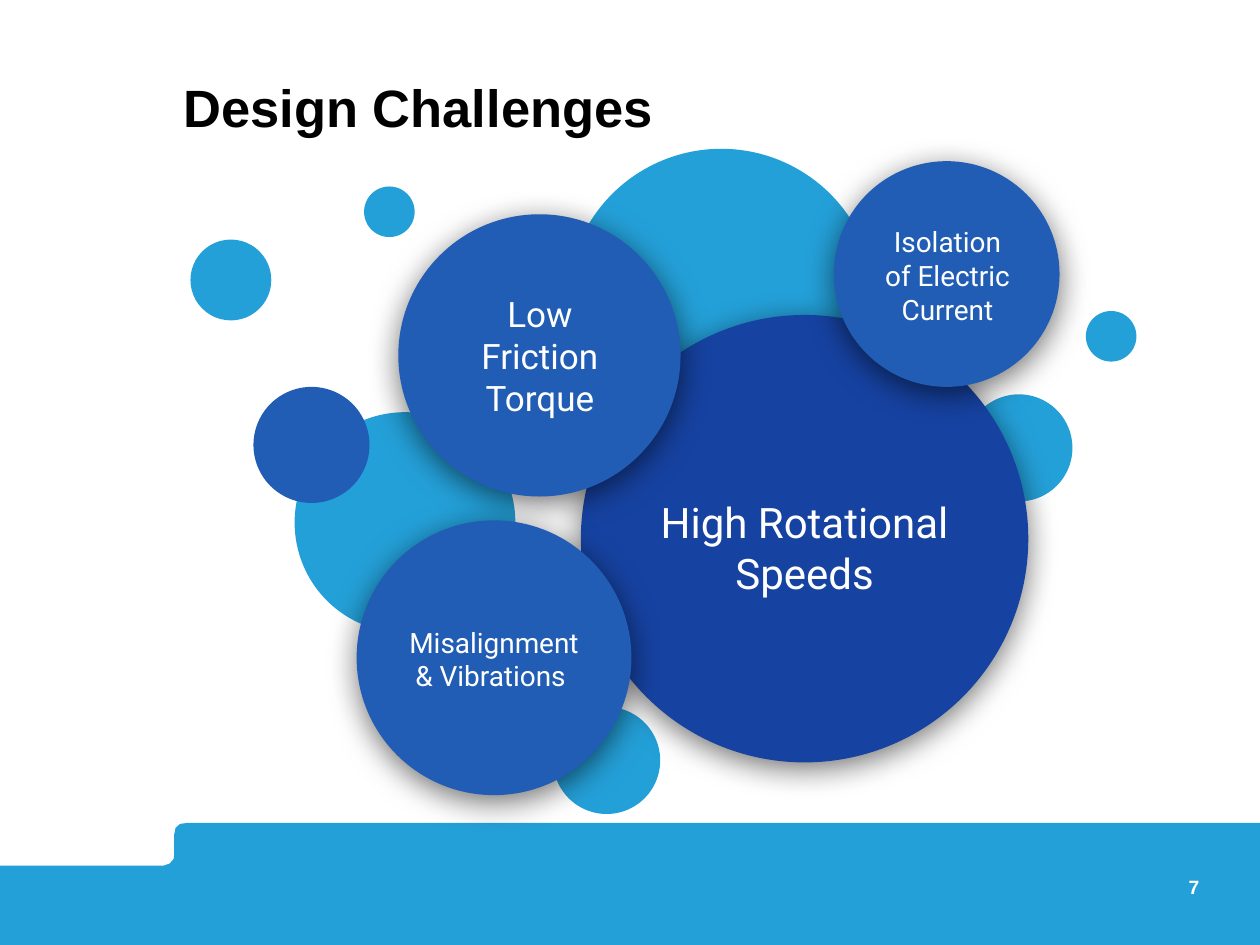
from lxml import etree
from pptx import Presentation
from pptx.dml.color import RGBColor
from pptx.enum.shapes import MSO_SHAPE
from pptx.enum.text import MSO_ANCHOR, PP_ALIGN
from pptx.oxml import parse_xml
from pptx.oxml.ns import nsdecls, qn
from pptx.util import Cm, Pt

SKY, BLUE, NAVY = "24A0D8", "215DB4", "1642A1"
BLACK, WHITE = "000000", "FFFFFF"


def colour(hex_code):
    return RGBColor.from_string(hex_code)


class SlideBuilder:
    """Holds the shared style and the slide being built."""

    heading_font = "Arial"
    label_font = "Roboto"
    padding = Cm(0.25)

    def __init__(self, page):
        self.page = page

    def paint(self, shape, fill):
        shape.shadow.inherit = False
        shape.fill.solid()
        shape.fill.fore_color.rgb = colour(fill)
        shape.line.fill.background()

    def band(self, points, fill):
        corners = [(Cm(x), Cm(y)) for x, y in points]
        builder = self.page.shapes.build_freeform(*corners[0])
        builder.add_line_segments(corners[1:], close=True)
        self.paint(builder.convert_to_shape(), fill)

    def circle(self, left, top, size, fill, parent=None):
        shapes = (parent or self.page).shapes
        disc = shapes.add_shape(MSO_SHAPE.OVAL, Cm(left), Cm(top), Cm(size), Cm(size))
        self.paint(disc, fill)
        return disc

    def soft_shadow(self, shape):
        effects = shape._element.spPr.find(qn("a:effectLst"))
        shadow = parse_xml(
            f'<a:outerShdw {nsdecls("a")} blurRad="{Pt(18)}" dist="{Pt(4)}" '
            f'dir="5400000" algn="t" rotWithShape="0"><a:srgbClr val="{BLACK}"/></a:outerShdw>')
        etree.SubElement(shadow[0], qn("a:alpha")).set("val", "55000")
        effects.append(shadow)

    def set_text(self, box, words, size, ink, font, align, bold=False, spacing=1.0,
                 padding=padding, anchor=MSO_ANCHOR.MIDDLE):
        frame = box.text_frame
        frame.word_wrap = True
        frame.vertical_anchor = anchor
        frame.margin_left = frame.margin_right = padding
        frame.margin_top = frame.margin_bottom = padding
        para = frame.paragraphs[0]
        para.text = words
        para.alignment = align
        para.line_spacing = spacing
        para.font.name = font
        para.font.size = Pt(size)
        para.font.bold = bold
        para.font.color.rgb = colour(ink)

    def text(self, left, top, width, height, words, size, ink, align, **style):
        box = self.page.shapes.add_textbox(Cm(left), Cm(top), Cm(width), Cm(height))
        self.set_text(box, words, size, ink, self.heading_font, align, bold=True, **style)

    def bubble(self, disc, label, fill, words, size):
        group = self.page.shapes.add_group_shape()
        self.soft_shadow(self.circle(*disc, fill, parent=group))
        box = group.shapes.add_shape(MSO_SHAPE.RECTANGLE, *[Cm(length) for length in label])
        self.paint(box, fill)
        self.set_text(box, words, size, WHITE, self.label_font, PP_ALIGN.CENTER)


def main():
    deck = Presentation()
    deck.slide_width, deck.slide_height = Cm(25.4), Cm(19.05)
    slide = SlideBuilder(deck.slides.add_slide(deck.slide_layouts[6]))

    # Footer band with a rounded step
    slide.band([(3.78, 16.59), (25.4, 16.59), (25.4, 19.05), (0, 19.05), (0, 17.45),
                (3.3, 17.45), (3.42, 17.41), (3.5, 17.32), (3.51, 17.25), (3.51, 16.84),
                (3.54, 16.69), (3.63, 16.61)], SKY)

    # Decorative circles: left, top, diameter, fill
    for left, top, size, fill in [
        (11.15, 14.25, 2.16, SKY),
        (3.84, 4.83, 1.63, SKY),
        (5.94, 8.31, 4.45, SKY),
        (11.43, 3, 6.22, SKY),
        (5.11, 7.8, 2.34, BLUE),
        (7.34, 3.76, 1.02, SKY),
        (19.46, 7.95, 2.16, SKY),
        (21.89, 6.27, 1.02, SKY),
    ]:
        slide.circle(left, top, size, fill)

    # Title
    slide.text(3.45, 1.12, 20.29, 1.85, "Design Challenges", 30, BLACK,
               PP_ALIGN.LEFT, spacing=1.15)

    # Challenges: disc, label box, fill, wording, text size
    for challenge in [
        ((11.71, 6.35, 9.02), (12.78, 8.89, 6.88, 4.29), NAVY, "High Rotational Speeds", 24),
        ((8.03, 4.32, 5.69), (8.94, 5.28, 3.89, 3.78), BLUE, "Low Friction Torque", 20),
        ((7.19, 10.49, 5.54), (7.98, 11.53, 3.96, 3.51), BLUE, "Misalignment & Vibrations ", 16),
        ((16.81, 3.25, 4.55), (17.55, 4.04, 3.1, 3.02), BLUE, "Isolation of Electric Current", 16),
    ]:
        slide.bubble(*challenge)

    # Page number
    slide.text(22.71, 17.5, 1.47, 1.02, "7", 11, WHITE, PP_ALIGN.RIGHT,
               spacing=1.29, padding=0, anchor=MSO_ANCHOR.TOP)

    deck.save("out.pptx")


if __name__ == "__main__":
    main()
